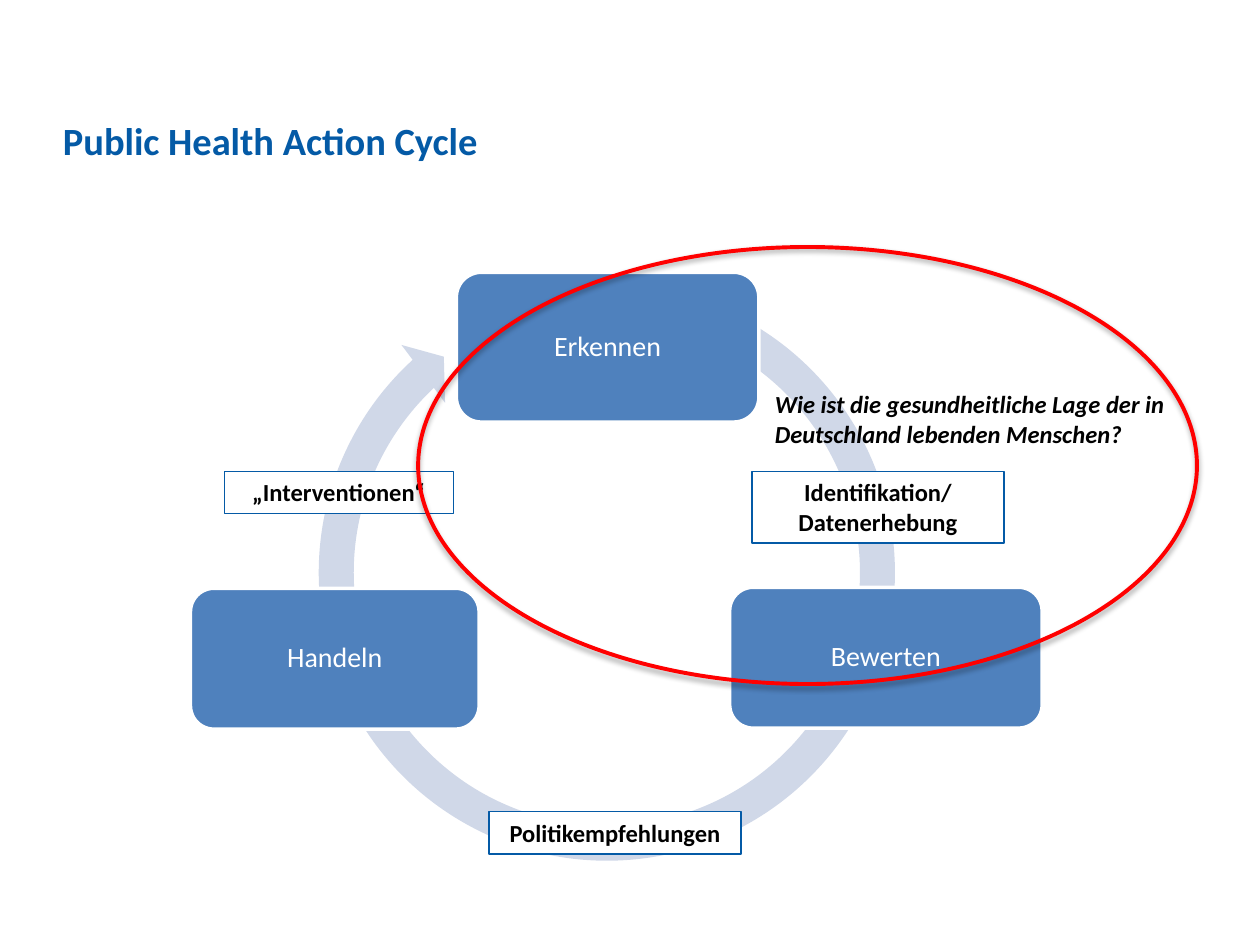
from dataclasses import dataclass

from lxml import etree
from pptx import Presentation
from pptx.dml.color import RGBColor
from pptx.enum.shapes import MSO_SHAPE
from pptx.enum.text import MSO_ANCHOR, MSO_AUTO_SIZE, PP_ALIGN
from pptx.oxml import parse_xml
from pptx.oxml.ns import nsdecls, qn
from pptx.util import Cm, Pt

CIRCULAR_ARROW = MSO_SHAPE.CIRCULAR_ARROW
ROUNDED = MSO_SHAPE.ROUNDED_RECTANGLE
RECTANGLE = MSO_SHAPE.RECTANGLE
OVAL = MSO_SHAPE.OVAL
MIDDLE, TOP = MSO_ANCHOR.MIDDLE, MSO_ANCHOR.TOP
LEFT, CENTER = PP_ALIGN.LEFT, PP_ALIGN.CENTER
GROW = MSO_AUTO_SIZE.SHAPE_TO_FIT_TEXT
MARGINS = ("margin_left", "margin_top", "margin_right", "margin_bottom")


@dataclass(frozen=True)
class Theme:
    """Colours, font and type sizes of the slide."""
    font: str = "Calibri"
    brand: str = "045AA6"
    step: str = "4F81BD"
    arrow: str = "D0D8E8"
    focus: str = "FF0000"
    white: str = "FFFFFF"
    black: str = "000000"
    title_size: int = 22
    step_size: int = 16
    label_size: int = 14


THEME = Theme()


def set_attributes(target, values):
    """Set every named value on the target."""
    for name, value in values.items():
        setattr(target, name, value)


def place(box, left, top, width, height):
    """Return lengths for a part placed relative to its region's box."""
    return Cm(box[0] + left), Cm(box[1] + top), Cm(width), Cm(height)


def add_figure(shapes, kind, bounds, fill=None, line=None, line_width=0):
    """Add a preset shape with plain fill and outline."""
    shape = shapes.add_shape(kind, *bounds)
    shape.shadow.inherit = False
    if fill:
        shape.fill.solid()
        shape.fill.fore_color.rgb = RGBColor.from_string(fill)
    else:
        shape.fill.background()
    if line:
        shape.line.color.rgb = RGBColor.from_string(line)
        shape.line.width = Pt(line_width)
    else:
        shape.line.fill.background()
    return shape


def write_text(shape, text, size, color, alignment=LEFT, frame_format=None, **font_format):
    """Write one formatted paragraph into a shape."""
    frame = shape.text_frame
    set_attributes(frame, {"word_wrap": True, **(frame_format or {})})
    paragraph = frame.paragraphs[0]
    paragraph.text = text
    paragraph.alignment = alignment
    font = paragraph.runs[0].font
    set_attributes(font, {"name": THEME.font, "size": Pt(size), **font_format})
    font.color.rgb = RGBColor.from_string(color)
    return paragraph


def add_title(slide, box):
    """Add the slide heading."""
    title = slide.shapes.add_textbox(*place(box[:2], 0, 0, *box[2:]))
    frame_format = {"vertical_anchor": MIDDLE, **dict.fromkeys(MARGINS, 0)}
    write_text(title, "Public Health Action Cycle", THEME.title_size, THEME.brand,
               frame_format=frame_format, bold=True)


def add_cycle(slide, box):
    """Add the circular arrow and the three steps on it."""
    shapes = slide.shapes.add_group_shape().shapes
    arrow = add_figure(shapes, CIRCULAR_ARROW, place(box, 2.21, 0, 12.37, 12.37), THEME.arrow)
    for index, value in enumerate((0.057, 3.405, 136.365, 174.654, 0.059)):
        arrow.adjustments[index] = value
    steps = (
        ("Erkennen", 5.36, 0.13, 6.1, 3.02),
        ("Bewerten", 10.87, 6.48, 6.3, 2.84),
        ("Handeln", 0, 6.5, 5.82, 2.84),
    )
    for text, *bounds in steps:
        step = add_figure(shapes, ROUNDED, place(box, *bounds), THEME.step, THEME.white, 2)
        paragraph = write_text(step, text, THEME.step_size, THEME.white, CENTER,
                               {"vertical_anchor": MIDDLE, **dict.fromkeys(MARGINS, Cm(0.18))})
        paragraph.line_spacing = 0.9


def add_labels(slide, box):
    """Add the framed labels between the steps."""
    labels = (
        ("Politikempfehlungen", 6.02, 11, 5.08, 0.86),
        ("„Interventionen“", 0.68, 4.14, 4.62, 0.86),
        ("Identifikation/ Datenerhebung", 11.32, 4.14, 5.08, 1.45),
    )
    for text, *bounds in labels:
        label = add_figure(slide.shapes, RECTANGLE, place(box, *bounds),
                           THEME.white, THEME.brand, 0.75)
        write_text(label, text, THEME.label_size, THEME.black, CENTER,
                   {"vertical_anchor": TOP, "auto_size": GROW}, bold=True)


def add_shadow(shape):
    """Give a shape a soft shadow straight below it."""
    effects = shape._element.spPr.find(qn("a:effectLst"))
    shadow = parse_xml(f'<a:outerShdw {nsdecls("a")} blurRad="{Pt(3.1)}" dist="{Pt(1.8)}" '
                       'dir="5400000" rotWithShape="0"/>')
    color = etree.SubElement(shadow, qn("a:srgbClr"), val=THEME.black)
    etree.SubElement(color, qn("a:alpha"), val="35000")
    effects.append(shadow)


def add_focus(slide, box):
    """Add the red ellipse and the question inside it."""
    ellipse = add_figure(slide.shapes, OVAL, place(box[:2], 0, 0, *box[2:]),
                         line=THEME.focus, line_width=2.25)
    add_shadow(ellipse)
    question = slide.shapes.add_textbox(*place(box, 6.94, 2.74, 8.41, 1.45))
    write_text(question, "Wie ist die gesundheitliche Lage der in Deutschland lebenden Menschen?",
               THEME.label_size, THEME.black, frame_format={"auto_size": GROW},
               bold=True, italic=True)


def main():
    """Build and save the presentation."""
    presentation = Presentation()
    set_attributes(presentation, {"slide_width": Cm(25.4), "slide_height": Cm(19.05)})
    slide = presentation.slides.add_slide(presentation.slide_layouts[6])
    cycle_box = (3.84, 5.36, 17.17, 12.37)
    add_title(slide, (1.27, 1.6, 22.17, 2.44))
    add_cycle(slide, cycle_box)
    add_labels(slide, cycle_box)
    add_focus(slide, (8.43, 4.98, 15.7, 8.81))
    presentation.save("out.pptx")


if __name__ == "__main__":
    main()
